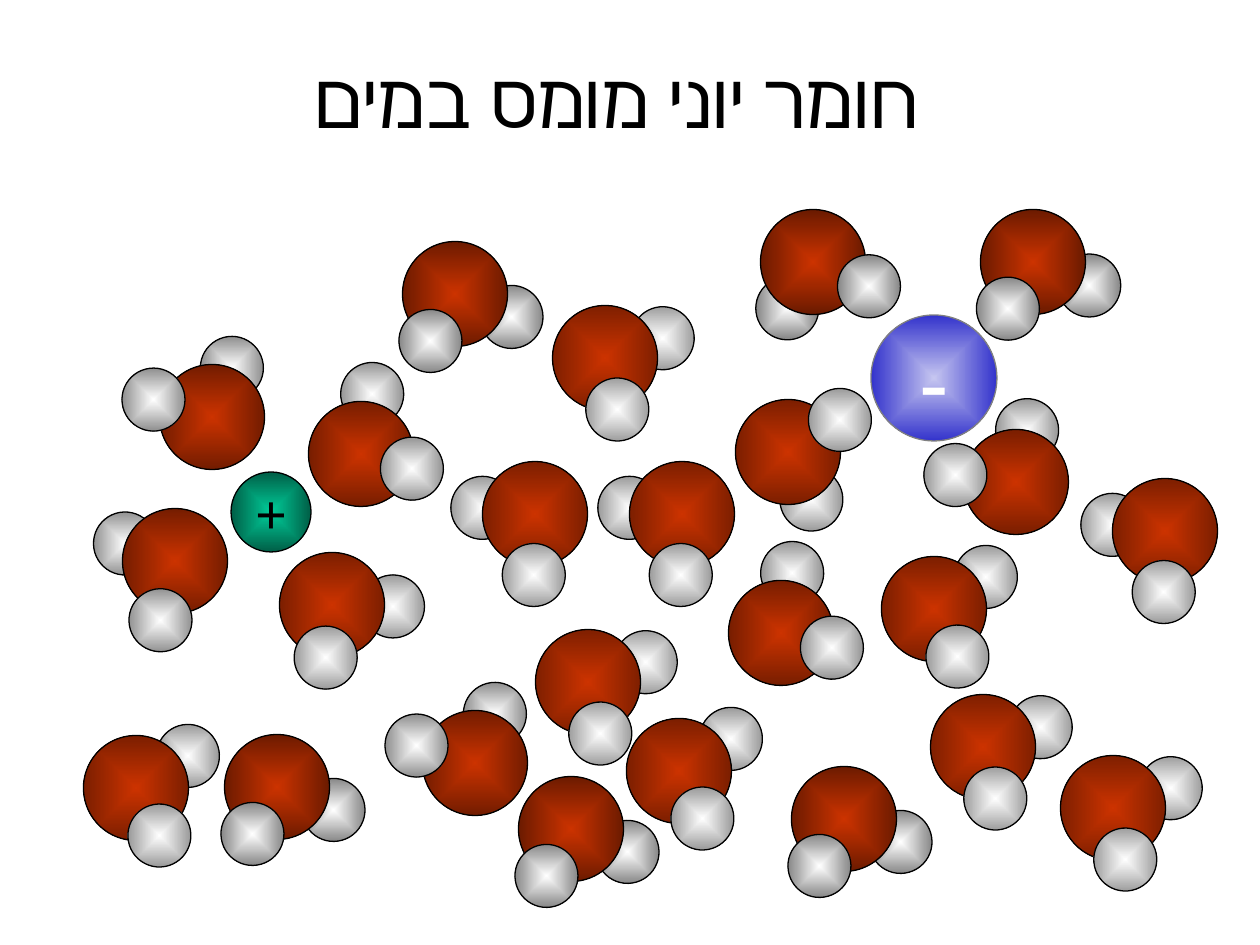
from math import cos, radians, sin

from lxml.etree import SubElement
from pptx import Presentation
from pptx.dml.color import RGBColor
from pptx.enum.shapes import MSO_SHAPE
from pptx.enum.text import MSO_ANCHOR, PP_ALIGN
from pptx.oxml.ns import qn
from pptx.util import Pt

PX = 914400 // 126
BLACK = RGBColor(0x00, 0x00, 0x00)
WHITE = RGBColor(0xFF, 0xFF, 0xFF)
GREY = RGBColor(0x80, 0x80, 0x80)
RED = RGBColor(0xCC, 0x33, 0x00)
GREEN = RGBColor(0x00, 0xCC, 0x99)
BLUE = RGBColor(0x33, 0x33, 0xCC)
FONT = "Times New Roman"

TITLE = "חומר יוני מומס במים"

# Oxygen centre x, y in px, turn in degrees, hydrogen that lies behind
WATER = [
    (361, 454, 339.6, "far"), (788, 452, 27.3, "near"),
    (332, 605, 60.4, "far"), (813, 262, 82.5, "near"),
    (212, 417, 255.6, "near"), (1016, 482, 245.6, "near"),
    (983, 747, 40.1, "far"), (175, 561, 162.8, "near"),
    (277, 787, 81.1, "far"), (1033, 262, 81.7, "far"),
    (455, 294, 81.1, "far"), (781, 633, 339.6, "far"),
    (605, 358, 40.1, "far"), (679, 771, 27.3, "far"),
    (475, 763, 255.6, "near"), (1165, 531, 150.2, "near"),
    (682, 514, 150.2, "near"), (934, 609, 27.3, "far"),
    (136, 788, 27.3, "far"), (844, 819, 81.1, "far"),
    (1113, 808, 40.1, "far"), (571, 829, 81.1, "far"),
    (588, 682, 40.1, "far"), (535, 514, 150.2, "near"),
]
# Distance in px and angle of each hydrogen before the turn
ARMS = {"far": (61, -59), "near": (53, 36.5)}

SHADE = ("shade", 46275)
TINT = ("tint", 27451)
OXYGEN = dict(kind=MSO_SHAPE.FLOWCHART_CONNECTOR, size=105, color=RED)
HYDRO = dict(kind=MSO_SHAPE.OVAL, size=63, color=WHITE)

# Centre, size, colour, centre and edge tone, line, sign, text size and colour
IONS = [
    (271, 512, 80, GREEN, None, SHADE, BLACK, "+", 32, BLACK),
    (934, 378, 126, BLUE, TINT, None, GREY, "-", 48, WHITE),
]


def paint(ball, color, inner, outer):
    """Fill with a gradient that runs from the middle to the edges."""
    ball.fill.gradient()
    grad = ball._element.spPr.find(qn("a:gradFill"))
    for part in list(grad):
        grad.remove(part)
    grad.set("rotWithShape", "1")
    stops = SubElement(grad, qn("a:gsLst"))
    for pos, tone in ((0, inner), (100000, outer)):
        stop = SubElement(stops, qn("a:gs"), pos=str(pos))
        rgb = SubElement(stop, qn("a:srgbClr"), val=str(color))
        if tone:
            name, val = tone
            SubElement(rgb, qn("a:gamma"))
            SubElement(rgb, qn("a:" + name), val=str(val))
            SubElement(rgb, qn("a:invGamma"))
    way = SubElement(grad, qn("a:path"), path="shape")
    SubElement(way, qn("a:fillToRect"),
               {side: "50000" for side in "ltrb"})


def add_ball(shapes, x, y, kind, size, color, inner=None, outer=SHADE,
             line=BLACK, turn=0):
    left, top = x - size / 2, y - size / 2
    box = [round(v * PX) for v in (left, top, size, size)]
    ball = shapes.add_shape(kind, *box)
    ball.shadow.inherit = False
    ball.rotation = turn
    paint(ball.fill and ball, color, inner, outer)
    ball.line.color.rgb = line
    ball.line.width = Pt(0.75)
    return ball


def add_water(shapes, x, y, turn, back):
    atoms = shapes.add_group_shape().shapes
    front = "near" if back == "far" else "far"
    for arm in (back, None, front):
        if arm is None:
            add_ball(atoms, x, y, turn=turn, **OXYGEN)
        else:
            dist, base = ARMS[arm]
            angle = radians(base + turn)
            add_ball(atoms, x + dist * cos(angle), y + dist * sin(angle),
                     turn=turn, **HYDRO)


def style(font, **form):
    for name, val in form.items():
        setattr(font, name, val)


def add_ion(shapes, x, y, size, color, inner, outer, line, sign, pts, ink):
    ball = add_ball(shapes, x, y, MSO_SHAPE.OVAL, size, color,
                    inner, outer, line)
    frame = ball.text_frame
    frame.word_wrap = False
    frame.vertical_anchor = MSO_ANCHOR.MIDDLE
    par = frame.paragraphs[0]
    par.alignment = PP_ALIGN.CENTER
    run = par.add_run()
    run.text = sign
    style(run.font, name=FONT, size=Pt(pts), bold=True)
    run.font.color.rgb = ink


def set_title(title):
    box = dict(left=81, top=19, width=1071, height=158)
    for name, val in box.items():
        setattr(title, name, val * PX)
    title.text_frame.vertical_anchor = MSO_ANCHOR.MIDDLE
    par = title.text_frame.paragraphs[0]
    par.alignment = PP_ALIGN.CENTER
    par._p.get_or_add_pPr().set("rtl", "1")
    run = par.add_run()
    run.text = TITLE
    style(run.font, name=FONT, size=Pt(44))
    run.font.color.rgb = BLACK


def main():
    deck = Presentation()
    deck.slide_width, deck.slide_height = 1260 * PX, 945 * PX
    slide = deck.slides.add_slide(deck.slide_layouts[5])
    set_title(slide.shapes.title)
    for item in WATER:
        add_water(slide.shapes, *item)
    for item in IONS:
        add_ion(slide.shapes, *item)
    deck.save("out.pptx")


if __name__ == "__main__":
    main()
